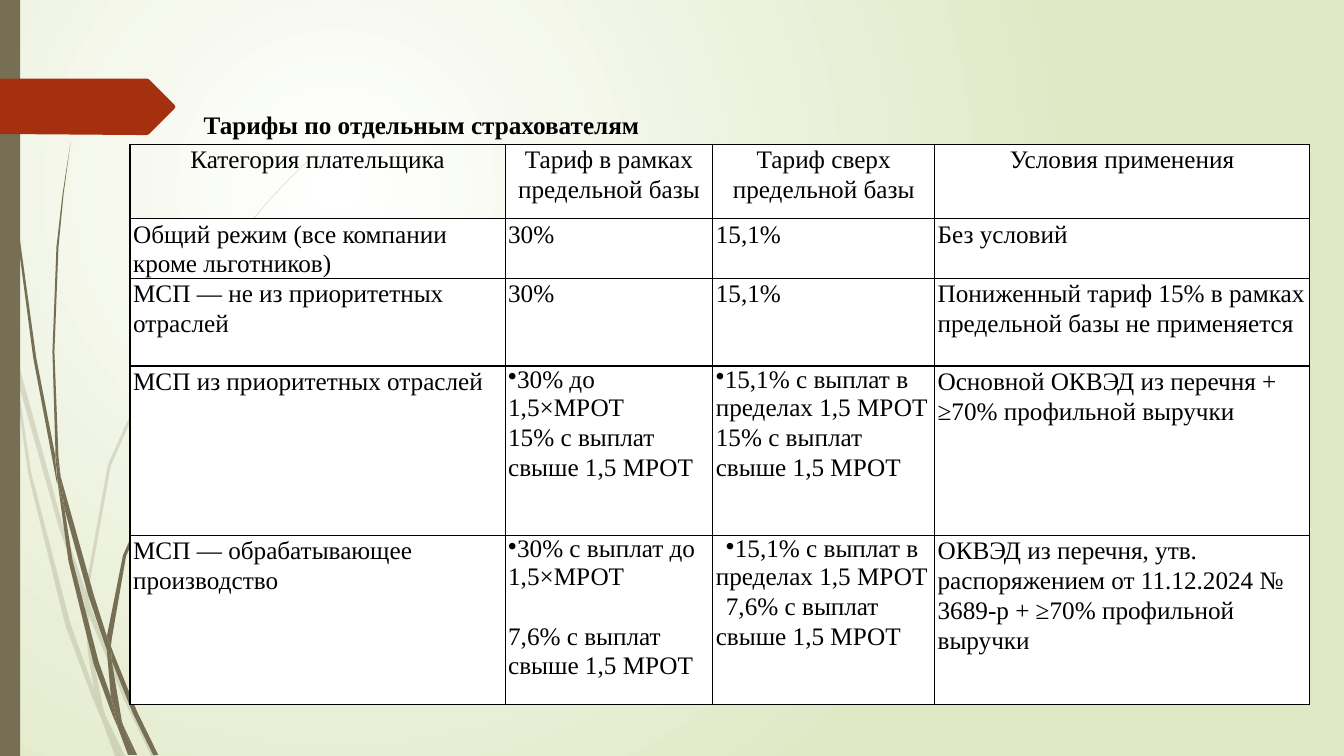
from lxml.etree import SubElement
from pptx import Presentation
from pptx.dml.color import RGBColor
from pptx.enum.shapes import MSO_SHAPE as Shape
from pptx.enum.text import MSO_ANCHOR as Anchor, PP_ALIGN as Align
from pptx.oxml import parse_xml
from pptx.oxml.ns import nsdecls, qn
from pptx.util import Inches, Pt

FONT = "Times New Roman"
BLACK = RGBColor(0x00, 0x00, 0x00)
WHITE = RGBColor(0xFF, 0xFF, 0xFF)
LIME = RGBColor(0xDF, 0xE8, 0xC4)
OLIVE = RGBColor(0x76, 0x6F, 0x54)
RUST = RGBColor(0xA5, 0x30, 0x10)

# Grass outlines, in hundredths of an inch
PALE = [
    [(11, 350), (9, 322), (0, 282), (0, 299), (10, 344)],
    [(58, 522), (84, 599), (85, 586), (62, 520), (14, 345), (17, 376)],
    [(92, 607), (88, 596), (88, 610), (123, 694), (150, 750), (155, 750), (127, 692)],
    [(119, 750), (124, 750), (105, 711)],
    [(93, 683), (70, 619), (31, 469), (17, 376), (11, 350), (28, 470), (65, 621),
     (92, 693), (101, 714), (99, 707)],
    [(84, 599), (87, 646), (93, 683), (96, 692), (105, 711), (103, 706), (91, 646),
     (88, 610), (88, 608)],
    [(88, 584), (110, 462), (160, 349), (229, 245), (268, 198), (290, 175), (312, 154),
     (312, 153), (289, 175), (268, 197), (228, 244), (158, 348), (107, 461), (85, 584),
     (85, 586), (88, 596)],
    [(101, 714), (114, 750), (119, 750)],
    [(88, 608), (88, 610), (88, 596), (85, 586), (84, 599)],
    [(96, 692), (93, 683), (99, 707), (101, 714), (119, 750), (105, 711)],
]
DARK = [
    [(7, 110), (17, 233), (33, 355), (56, 477), (57, 481), (55, 457), (55, 453), (36, 355),
     (19, 232), (8, 109), (5, 48), (4, 0), (3, 0), (4, 48)],
    [(88, 592), (106, 645), (106, 633), (106, 631), (93, 590), (60, 472), (64, 505)],
    [(113, 649), (110, 641), (111, 656), (132, 708), (152, 749), (157, 749), (136, 706)],
    [(110, 691), (98, 657), (72, 556), (64, 505), (57, 477), (68, 557), (93, 659),
     (111, 708), (117, 722), (116, 717)],
    [(60, 472), (58, 453), (54, 349), (58, 245), (63, 193), (70, 141), (62, 193),
     (56, 245), (52, 349), (55, 449)],
    [(133, 749), (136, 749), (122, 719)],
    [(57, 477), (64, 505), (60, 472), (55, 449), (55, 453)],
    [(111, 633), (125, 552), (158, 476), (205, 406), (231, 374), (245, 359), (261, 344),
     (260, 344), (245, 358), (231, 373), (204, 405), (156, 474), (122, 551), (106, 631),
     (110, 641)],
    [(117, 722), (127, 749), (131, 749)],
    [(106, 645), (110, 691), (116, 706), (122, 719), (121, 716), (111, 656), (109, 651)],
    [(106, 645), (109, 651), (111, 656), (110, 641), (106, 631), (106, 633)],
    [(116, 706), (110, 691), (116, 717), (117, 722), (130, 749), (133, 749), (122, 719)],
]
ARROW = [(173, 108), (148, 133), (146, 134), (136, 134), (0, 133), (0, 78), (136, 78),
         (146, 78), (148, 79), (173, 104), (174, 106)]

# Each cell is a list of paragraphs; a leading • marks a bullet
ROWS = [
    [["Категория плательщика"], ["Тариф в рамках предельной базы"],
     ["Тариф сверх предельной базы"], ["Условия применения"]],
    [["Общий режим (все компании кроме льготников)"], ["30%"], ["15,1%"], ["Без условий"]],
    [["МСП — не из приоритетных отраслей"], ["30%"], ["15,1%"],
     ["Пониженный тариф 15% в рамках предельной базы не применяется"]],
    [["МСП из приоритетных отраслей"],
     ["•30% до 1,5×МРОТ", "15% с выплат свыше 1,5 МРОТ"],
     ["•15,1% с выплат в пределах 1,5 МРОТ", "15% с выплат свыше 1,5 МРОТ"],
     ["Основной ОКВЭД из перечня + ≥70% профильной выручки"]],
    [["МСП — обрабатывающее производство"],
     ["•30% с выплат до 1,5×МРОТ", "7,6% с выплат свыше 1,5 МРОТ"],
     ["•15,1% с выплат в пределах 1,5 МРОТ", "7,6% с выплат свыше 1,5 МРОТ"],
     ["ОКВЭД из перечня, утв. распоряжением от 11.12.2024 № 3689-р + ≥70% профильной выручки"]],
]
WIDTHS = [3.72, 2.06, 2.2, 3.72]
HEIGHTS = [0.74, 0.57, 0.87, 1.68, 1.68]


def draw(points, color):
    pen = slide.shapes.build_freeform(*points[0], scale=Inches(0.01))
    pen.add_line_segments(points[1:])
    shape = pen.convert_to_shape()
    shape.shadow.inherit = False
    shape.fill.solid()
    shape.fill.fore_color.rgb = color
    shape.line.fill.background()
    return shape


def write(para, text, bold=False):
    run = para.add_run()
    run.text = text
    run.font.name = FONT
    run.font.size = Pt(18)
    run.font.bold = bold
    run.font.color.rgb = BLACK


deck = Presentation()
deck.slide_width, deck.slide_height = Inches(13.33), Inches(7.5)
slide = deck.slides.add_slide(deck.slide_layouts[5])

# Background glow
fill = slide.background.fill
fill.gradient()
for stop, color in zip(fill.gradient_stops, (WHITE, LIME)):
    stop.color.rgb = color
grad = slide.background._cSld.find(".//" + qn("a:gradFill"))
grad.remove(grad.find(qn("a:lin")))
glow = SubElement(grad, qn("a:path"), {"path": "circle"})
SubElement(glow, qn("a:fillToRect"), l="50000", t="50000", r="100000", b="100000")

# Grass, side bar and arrow
for blade in PALE:
    shape = draw(blade, OLIVE)
    tint = shape.fill._xPr.find(".//" + qn("a:srgbClr"))
    SubElement(tint, qn("a:alpha"), val="20000")
for blade in DARK:
    draw(blade, OLIVE)
bar = slide.shapes.add_shape(Shape.RECTANGLE, 0, 0, Inches(0.2), Inches(7.5))
bar.shadow.inherit = False
bar.fill.solid()
bar.fill.fore_color.rgb = OLIVE
bar.line.fill.background()
draw(ARROW, RUST)

# Title
title = slide.shapes.title
title.left, title.top = Inches(1.92), Inches(1.03)
title.width, title.height = Inches(6.67), Inches(0.4)
frame = title.text_frame
frame.word_wrap = True
frame.vertical_anchor = Anchor.TOP
para = frame.paragraphs[0]
para.alignment = Align.LEFT
write(para, "Тарифы по отдельным страхователям", True)

# Rates table
table = slide.shapes.add_table(5, 4, Inches(1.29), Inches(1.43),
                               Inches(sum(WIDTHS)), Inches(sum(HEIGHTS))).table
table.first_row = table.horz_banding = False
for col, width in zip(table.columns, WIDTHS):
    col.width = Inches(width)
for row, height in zip(table.rows, HEIGHTS):
    row.height = Inches(height)

for r, row in enumerate(ROWS):
    for c, texts in enumerate(row):
        cell = table.cell(r, c)
        cell.margin_left = cell.margin_right = Inches(0.03)
        cell.margin_top = cell.margin_bottom = 0
        if r == c == 0:
            cell.fill.background()
        else:
            cell.fill.solid()
            cell.fill.fore_color.rgb = WHITE
        for n, side in enumerate(("lnL", "lnR", "lnT", "lnB")):
            edge = parse_xml(f'<a:{side} {nsdecls("a")} w="12700"><a:solidFill>'
                             f'<a:srgbClr val="{BLACK}"/></a:solidFill></a:{side}>')
            cell._tc.get_or_add_tcPr().insert(n, edge)
        frame = cell.text_frame
        for n, text in enumerate(texts):
            para = frame.add_paragraph() if n else frame.paragraphs[0]
            para.alignment = Align.LEFT if r else Align.CENTER
            props = para._p.get_or_add_pPr()
            if (r, c) == (4, 2):
                props.set("marL", "0")
                props.set("indent", str(Inches(0.1)))
            if text.startswith("•"):
                SubElement(props, qn("a:buChar"), char="•")
            else:
                para.line_spacing = 1.07
                para.space_after = Pt(8)
            if n and (r, c) == (4, 1):
                para.space_before = Pt(21)
            write(para, text.lstrip("•"))

deck.save("out.pptx")
